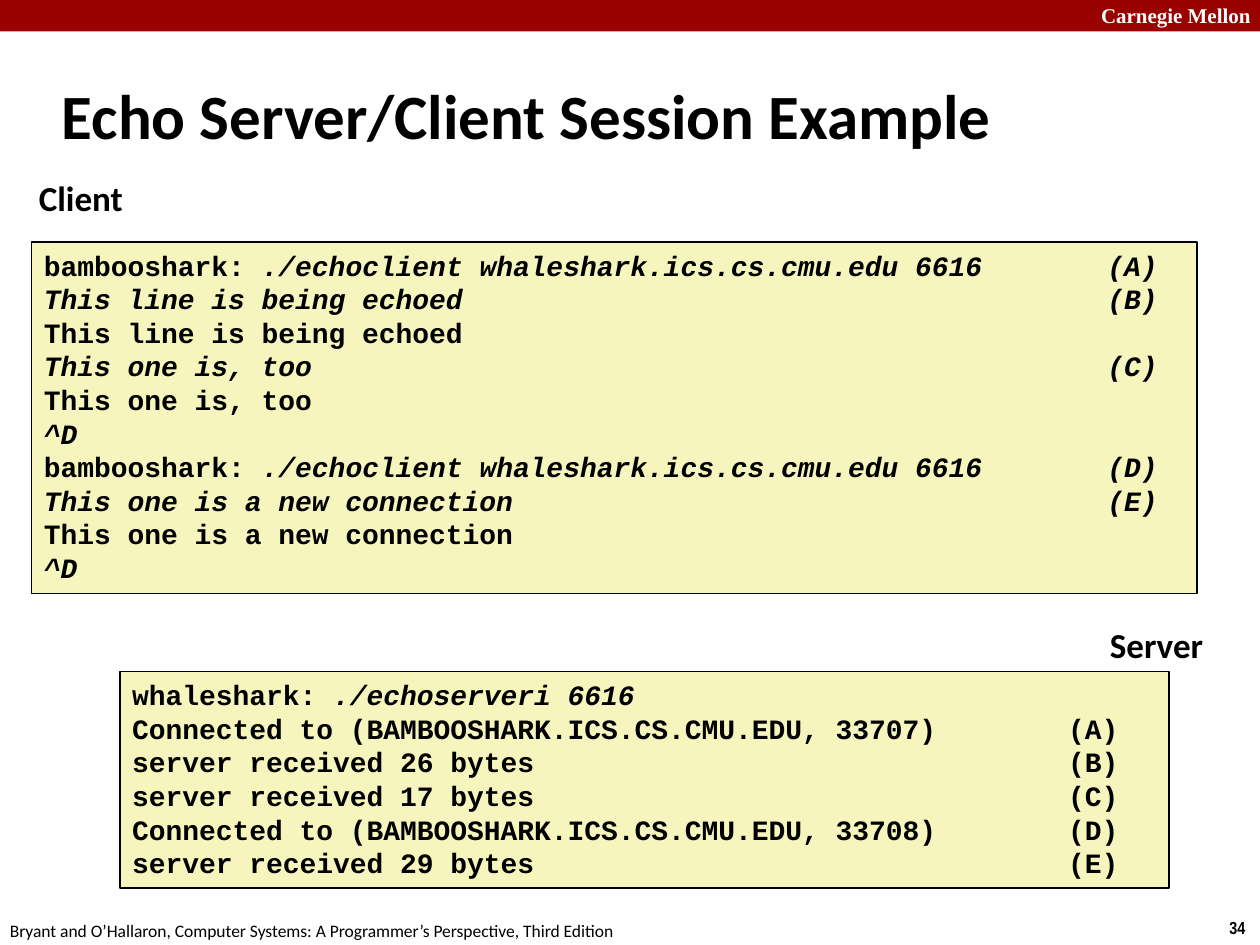
from pptx import Presentation, util as u
from pptx.dml.color import RGBColor
from pptx.enum import shapes, text
from pptx.oxml import parse_xml
from pptx.oxml.ns import nsdecls

THEME = {
    "black": RGBColor(0, 0, 0),
    "red": RGBColor(0x99, 0, 0),
    "cream": RGBColor(0xF6, 0xF5, 0xBD),
    "white": RGBColor(255, 255, 255),
    "title": {"name": "Calibri", "size": u.Pt(36), "bold": True},
    "label": {"name": "Calibri", "size": u.Pt(20), "bold": True},
    "code": {"name": "Courier New", "size": u.Pt(16), "bold": True},
    "brand": {"name": "Times New Roman", "size": u.Pt(12), "bold": True},
    "page": {"name": "Arial Narrow", "size": u.Pt(10), "bold": True},
    "foot": {"name": "Calibri", "size": u.Pt(10), "bold": False},
}


def add_run(para, words, style, color="black", italic=False):
    run = para.add_run()
    run.text = words
    for key, val in THEME[style].items():
        setattr(run.font, key, val)
    run.font.italic = italic
    run.font.color.rgb = THEME[color]


def add_rect(box, fill):
    rect = slide.shapes.add_shape(shapes.MSO_SHAPE.RECTANGLE, *map(u.Inches, box))
    rect.shadow.inherit = False
    rect.fill.solid()
    rect.fill.fore_color.rgb = THEME[fill]
    return rect


deck = Presentation()
deck.slide_width, deck.slide_height = u.Inches(10), u.Inches(7.5)
slide = deck.slides.add_slide(deck.slide_layouts[5])

# Top band
add_rect((0, 0, 10, 0.25), "red").line.fill.background()

# Title
title = slide.shapes.title
title.left, title.top, title.width, title.height = map(u.Inches, (0.39, 0.49, 8.3, 0.83))
frame = title.text_frame
frame.auto_size = text.MSO_AUTO_SIZE.NONE
frame.vertical_anchor = text.MSO_ANCHOR.MIDDLE
para = frame.paragraphs[0]
para.alignment = text.PP_ALIGN.LEFT
add_run(para, "Echo Server/Client Session Example", "title")

# Consoles: each line is (printed, typed, mark)
connect = "./echoclient whaleshark.ics.cs.cmu.edu 6616"
client = [
    ("bambooshark: ", connect, "A"),
    ("", "This line is being echoed", "B"),
    ("This line is being echoed", "", ""),
    ("", "This one is, too", "C"),
    ("This one is, too", "", ""),
    ("", "^D", ""),
    ("bambooshark: ", connect, "D"),
    ("", "This one is a new connection", "E"),
    ("This one is a new connection", "", ""),
    ("", "^D", ""),
]
server = [
    ("whaleshark: ", "./echoserveri 6616", ""),
    ("Connected to (BAMBOOSHARK.ICS.CS.CMU.EDU, 33707)", "", "A"),
    ("server received 26 bytes", "", "B"),
    ("server received 17 bytes", "", "C"),
    ("Connected to (BAMBOOSHARK.ICS.CS.CMU.EDU, 33708)", "", "D"),
    ("server received 29 bytes", "", "E"),
]
for box, stop, lines in [
    ((0.95, 5.33, 8.33, 1.72), 7.43, server),
    ((0.25, 1.92, 9.25, 2.79), 8.44, client),
]:
    rect = add_rect(box, "cream")
    rect.line.color.rgb = THEME["black"]
    rect.line.width = u.Pt(1)
    frame = rect.text_frame
    frame.word_wrap = True
    frame.vertical_anchor = text.MSO_ANCHOR.TOP
    for num, (shown, typed, mark) in enumerate(lines):
        para = frame.add_paragraph() if num else frame.paragraphs[0]
        para.alignment = text.PP_ALIGN.LEFT
        para._p.get_or_add_pPr().append(parse_xml(
            f'<a:tabLst {nsdecls("a")}><a:tab pos="{u.Inches(stop)}" algn="l"/></a:tabLst>'))
        tail = f"\t({mark})" if mark else ""
        if shown:
            add_run(para, shown if typed else shown + tail, "code")
        if typed:
            add_run(para, typed + tail, "code", italic=True)

# Labels, header and footer
for box, words, style, color, wrap in [
    ((0.21, 1.35, 0.88, 0.44), "Client", "label", "black", False),
    ((8.71, 4.9, 0.95, 0.44), "Server", "label", "black", False),
    ((8.64, -0.03, 1.43, 0.3), "Carnegie Mellon", "brand", "white", True),
    ((9.66, 7.23, 0.34, 0.27), "34", "page", "black", False),
    ((-0.02, 7.25, 5.08, 0.27),
     "Bryant and O’Hallaron, Computer Systems: A Programmer’s Perspective, Third Edition",
     "foot", "black", False),
]:
    frame = slide.shapes.add_textbox(*map(u.Inches, box)).text_frame
    frame.word_wrap = wrap
    add_run(frame.paragraphs[0], words, style, color)

deck.save("out.pptx")
